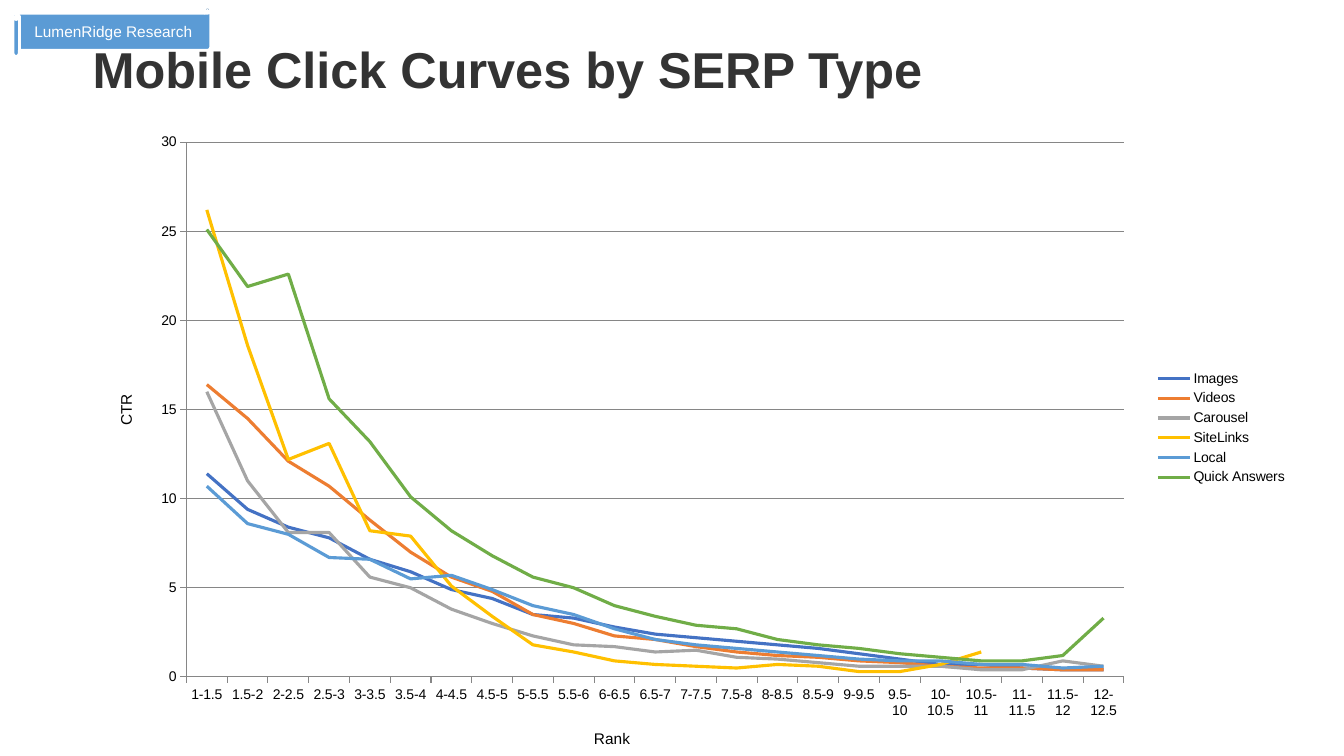
import pptx
import pptx.chart.data
import pptx.dml.color
import pptx.enum.chart
import pptx.enum.shapes
import pptx.enum.text
import pptx.oxml
import pptx.util
import lxml.etree

COLORS = {
    "title": "333333",
    "text": "000000",
    "white": "FFFFFF",
    "grid": "868686",
    "banner": "5B9BD5",
    "Images": "4472C4",
    "Videos": "ED7D31",
    "Carousel": "A5A5A5",
    "SiteLinks": "FFC000",
    "Local": "5B9BD5",
    "Quick Answers": "70AD47",
}

RANK_STEPS = [1 + step / 2 for step in range(23)]
RANKS = [f"{start:g}-{start + 0.5:g}" for start in RANK_STEPS]

CLICK_RATES = {
    "Images": [11.4, 9.4, 8.4, 7.8, 6.6, 5.9, 4.9, 4.4, 3.5, 3.3, 2.8, 2.4,
               2.2, 2, 1.8, 1.6, 1.3, 1, 0.7, 0.7, 0.5, 0.4, 0.4],
    "Videos": [16.4, 14.5, 12.1, 10.7, 8.8, 7, 5.6, 4.8, 3.5, 3, 2.3, 2.1,
               1.7, 1.4, 1.2, 1.1, 0.9, 0.8, 0.6, 0.5, 0.5, 0.4, 0.4],
    "Carousel": [16, 11, 8.1, 8.1, 5.6, 5, 3.8, 3, 2.3, 1.8, 1.7, 1.4,
                 1.5, 1.1, 1, 0.8, 0.6, 0.6, 0.6, 0.4, 0.4, 0.9, 0.6],
    "SiteLinks": [26.2, 18.6, 12.2, 13.1, 8.2, 7.9, 5.1, 3.4, 1.8, 1.4, 0.9, 0.7,
                  0.6, 0.5, 0.7, 0.6, 0.3, 0.3, 0.7, 1.4, None, None, None],
    "Local": [10.7, 8.6, 8, 6.7, 6.6, 5.5, 5.7, 4.9, 4, 3.5, 2.7, 2.1,
              1.8, 1.6, 1.4, 1.2, 1, 0.9, 0.9, 0.7, 0.7, 0.5, 0.6],
    "Quick Answers": [25.1, 21.9, 22.6, 15.6, 13.2, 10.1, 8.2, 6.8, 5.6, 5, 4, 3.4,
                      2.9, 2.7, 2.1, 1.8, 1.6, 1.3, 1.1, 0.9, 0.9, 1.2, 3.3],
}


def color(name):
    return pptx.dml.color.RGBColor.from_string(COLORS[name])


class SlideBuilder:
    font_name = "Arial"

    def __init__(self, slide):
        self.slide = slide

    def style_font(self, font, size, color_name, bold=False):
        font.name = self.font_name
        font.size = pptx.util.Pt(size)
        font.bold = bold
        font.color.rgb = color(color_name)

    def set_text(self, shape, text, size, color_name, bold=False):
        paragraph = shape.text_frame.paragraphs[0]
        paragraph.text = text
        paragraph.alignment = pptx.enum.text.PP_ALIGN.CENTER
        self.style_font(paragraph.font, size, color_name, bold)

    def text_box(self, box, text, size, color_name, bold=False):
        shape = self.slide.shapes.add_textbox(*map(pptx.util.Inches, box))
        shape.text_frame.word_wrap = True
        self.set_text(shape, text, size, color_name, bold)
        return shape

    def title(self, box, text):
        shape = self.text_box(box, text, 36, "title", bold=True)
        frame = shape.text_frame
        frame.margin_left = pptx.util.Inches(0.35)
        frame.margin_top = frame.margin_right = frame.margin_bottom = pptx.util.Inches(0.1)
        paragraph = frame.paragraphs[0]
        paragraph.alignment = pptx.enum.text.PP_ALIGN.LEFT
        paragraph.line_spacing = 1.06
        paragraph.space_before = pptx.util.Pt(10)

    def axis_label(self, box, text, rotation=0):
        shape = self.text_box(box, text, 11, "text")
        shape.rotation = rotation

    def banner(self, box, text):
        shape = self.slide.shapes.add_shape(
            pptx.enum.shapes.MSO_SHAPE.HORIZONTAL_SCROLL, *map(pptx.util.Inches, box))
        shape.shadow.inherit = False
        shape.fill.solid()
        shape.fill.fore_color.rgb = color("banner")
        shape.line.color.rgb = color("white")
        shape.line.width = pptx.util.Pt(2)
        shape.text_frame.vertical_anchor = pptx.enum.text.MSO_ANCHOR.MIDDLE
        self.set_text(shape, text, 11, "white")

    def line_chart(self, box, categories, series_values, plot_area):
        data = pptx.chart.data.CategoryChartData()
        data.categories = categories
        for name, values in series_values.items():
            data.add_series(name, values)
        chart = self.slide.shapes.add_chart(
            pptx.enum.chart.XL_CHART_TYPE.LINE, *map(pptx.util.Inches, box), data).chart
        chart.has_title = False
        self.style_font(chart.font, 10, "text")
        chart.has_legend = True
        chart.legend.position = pptx.enum.chart.XL_LEGEND_POSITION.RIGHT
        chart.legend.include_in_layout = False
        plot = chart.plots[0]
        plot.vary_by_categories = False
        for series in plot.series:
            series.smooth = False
            series.format.line.color.rgb = color(series.name)
            series.format.line.width = pptx.util.Pt(2.25)
        for axis in (chart.category_axis, chart.value_axis):
            axis.major_tick_mark = pptx.enum.chart.XL_TICK_MARK.OUTSIDE
            self.style_grid(axis.format.line)
        value_axis = chart.value_axis
        value_axis.minimum_scale, value_axis.maximum_scale = 0, 30
        value_axis.major_unit = 5
        value_axis.has_major_gridlines = True
        self.style_grid(value_axis.major_gridlines.format.line)
        self.place_plot(chart, plot_area)

    def style_grid(self, line):
        line.color.rgb = color("grid")
        line.width = pptx.util.Pt(0.75)

    def place_plot(self, chart, plot_area):
        tag = pptx.oxml.ns.qn
        area = chart.element.find(".//" + tag("c:plotArea"))
        for layout in area.findall(tag("c:layout")):
            area.remove(layout)
        layout = lxml.etree.Element(tag("c:layout"))
        area.insert(0, layout)
        manual = lxml.etree.SubElement(layout, tag("c:manualLayout"))
        settings = [("layoutTarget", "inner"), ("xMode", "edge"), ("yMode", "edge")]
        for name, value in settings + list(zip("xywh", plot_area)):
            lxml.etree.SubElement(manual, tag("c:" + name), val=str(value))


def main():
    presentation = pptx.Presentation()
    presentation.slide_width = pptx.util.Inches(13.33)
    presentation.slide_height = pptx.util.Inches(7.5)
    builder = SlideBuilder(presentation.slides.add_slide(presentation.slide_layouts[6]))
    builder.title((0.57, 0.24, 11.44, 1.18), "Mobile Click Curves by SERP Type")
    builder.line_chart((1.39, 1.23, 11.48, 6.03), RANKS, CLICK_RATES,
                       (0.04, 0.03, 0.81, 0.88))
    builder.banner((0.13, 0.07, 1.96, 0.49), "LumenRidge Research")
    builder.axis_label((5.74, 7.18, 0.66, 0.29), "Rank")
    builder.axis_label((0.92, 3.92, 0.66, 0.29), "CTR", rotation=270)
    presentation.save("out.pptx")


if __name__ == "__main__":
    main()
